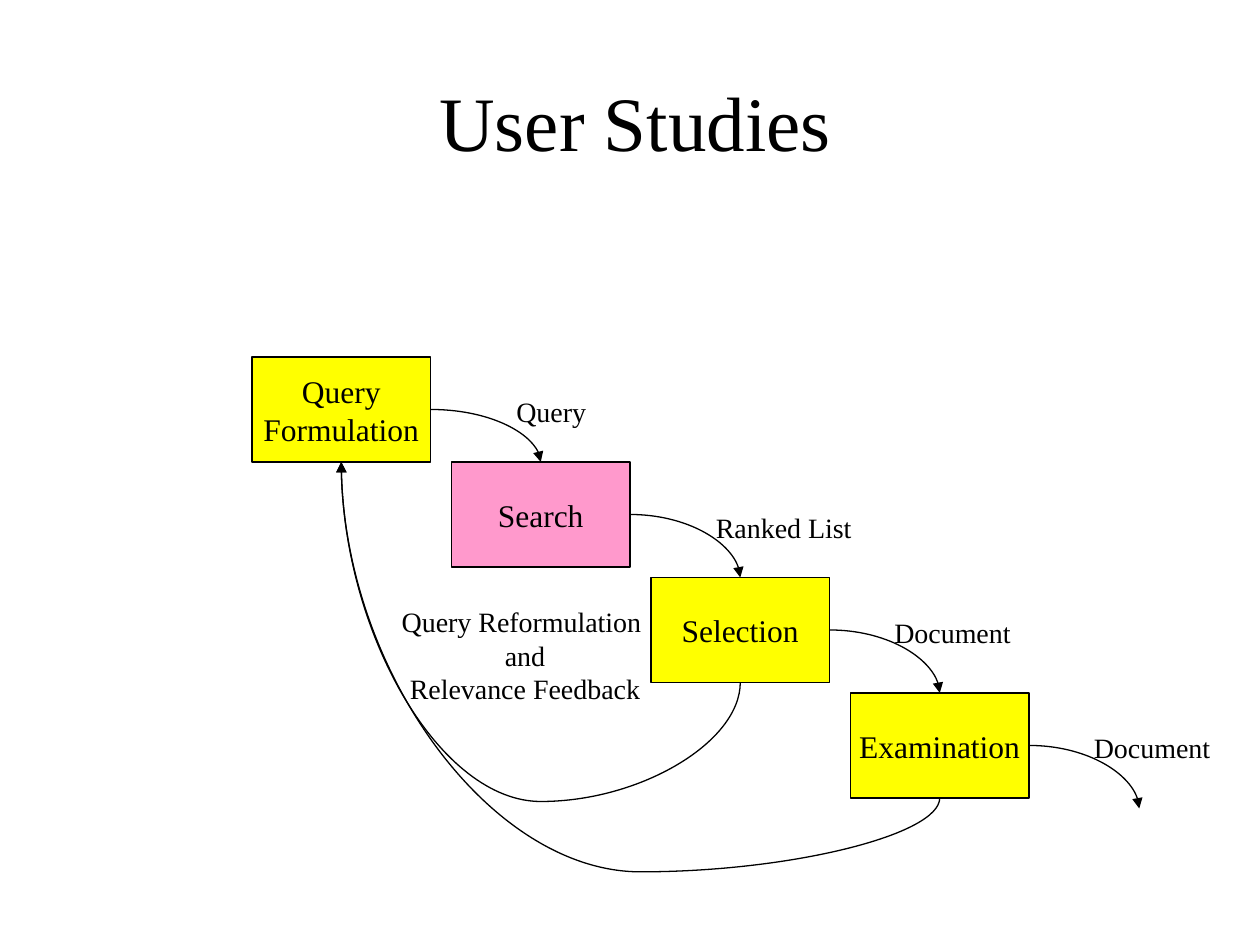
import pptx
import pptx.util
import pptx.dml.color
import pptx.enum.shapes
import pptx.enum.text
import pptx.oxml.ns
import lxml.etree

Pt = pptx.util.Pt
RGBColor = pptx.dml.color.RGBColor
MSO_ANCHOR = pptx.enum.text.MSO_ANCHOR
PP_ALIGN = pptx.enum.text.PP_ALIGN
qn = pptx.oxml.ns.qn

BLACK = RGBColor(0x00, 0x00, 0x00)
YELLOW = RGBColor(0xFF, 0xFF, 0x00)
PINK = RGBColor(0xFF, 0x99, 0xCC)

TOP, BOTTOM, RIGHT = 0, 2, 3  # connection sites of a rectangle
BOX_W, BOX_H = 102, 60


def write(tf, text, size=16, align=PP_ALIGN.LEFT, anchor=MSO_ANCHOR.TOP, wrap=False):
    """Fill a text frame, one paragraph for each line of text."""
    tf.word_wrap = wrap
    tf.vertical_anchor = anchor
    for i, line in enumerate(text.split("\n")):
        p = tf.paragraphs[0] if i == 0 else tf.add_paragraph()
        p.alignment = align
        r = p.add_run()
        r.text = line
        r.font.name = "Times New Roman"
        r.font.size = Pt(size)
        r.font.color.rgb = BLACK


class FlowSlide:
    """Style and current slide of the flow diagram."""

    line_width = 0.75

    def __init__(self, prs):
        self.s = prs.slides.add_slide(prs.slide_layouts[5])

    def title(self, text, x, y, w, h):
        sp = self.s.shapes.title
        sp.left, sp.top, sp.width, sp.height = Pt(x), Pt(y), Pt(w), Pt(h)
        write(sp.text_frame, text, size=44, align=PP_ALIGN.CENTER,
              anchor=MSO_ANCHOR.MIDDLE, wrap=True)

    def box(self, text, x, y, fill):
        sp = self.s.shapes.add_shape(pptx.enum.shapes.MSO_SHAPE.RECTANGLE,
                                     Pt(x), Pt(y), Pt(BOX_W), Pt(BOX_H))
        sp.shadow.inherit = False
        sp.fill.solid()
        sp.fill.fore_color.rgb = fill
        sp.line.color.rgb = BLACK
        sp.line.width = Pt(self.line_width)
        write(sp.text_frame, text, size=18, align=PP_ALIGN.CENTER,
              anchor=MSO_ANCHOR.MIDDLE)
        return sp

    def label(self, text, x, y, w, h=27, align=PP_ALIGN.LEFT):
        sp = self.s.shapes.add_textbox(Pt(x), Pt(y), Pt(w), Pt(h))
        write(sp.text_frame, text, align=align)
        sp.text_frame.auto_size = pptx.enum.text.MSO_AUTO_SIZE.SHAPE_TO_FIT_TEXT

    def curve(self, x1, y1, x2, y2):
        c = self.s.shapes.add_connector(pptx.enum.shapes.MSO_CONNECTOR.CURVE,
                                        x1, y1, x2, y2)
        c.line.color.rgb = BLACK
        c.line.width = Pt(self.line_width)
        ln = c._element.spPr.find(qn("a:ln"))
        lxml.etree.SubElement(ln, qn("a:tailEnd")).set("type", "triangle")
        lxml.etree.SubElement(c._element.spPr, qn("a:effectLst"))
        return c

    def step(self, start, x2, y2, end=None):
        """Quarter curve from the right side of a box down to a point."""
        c = self.curve(start.left + start.width, start.top + start.height // 2,
                       x2, y2)
        c._element.spPr.find(qn("a:prstGeom")).set("prst", "curvedConnector2")
        c.begin_connect(start, RIGHT)
        if end is not None:
            c.end_connect(end, TOP)

    def feedback(self, start, end, adjust):
        """Curve that dips below the start box and rises to the end box."""
        x1, x2 = [b.left + b.width // 2 for b in (start, end)]
        y1, y2 = [b.top + b.height for b in (start, end)]
        c = self.curve(x1, y1, x2, y2)
        c.begin_connect(start, BOTTOM)
        c.end_connect(end, BOTTOM)
        # A quarter turn swaps width and height around the same centre
        w, h = y1 - y2, x1 - x2
        c.left, c.top = (x1 + x2 - w) // 2, (y1 + y2 - h) // 2
        c.width, c.height = w, h
        xfrm = c._element.spPr.find(qn("a:xfrm"))
        for name, value in (("rot", "16200000"), ("flipH", "0"), ("flipV", "1")):
            xfrm.set(name, value)
        geom = c._element.spPr.find(qn("a:prstGeom"))
        guides = geom.find(qn("a:avLst"))
        if guides is None:
            guides = lxml.etree.SubElement(geom, qn("a:avLst"))
        gd = lxml.etree.SubElement(guides, qn("a:gd"))
        gd.set("name", "adj1")
        gd.set("fmla", f"val {round(adjust * 100000)}")


def main():
    prs = pptx.Presentation()
    prs.slide_width, prs.slide_height = Pt(720), Pt(540)
    flow = FlowSlide(prs)
    flow.title("User Studies", 42, 24, 642, 90)

    # Stages of the search process, stepping down to the right
    stages = [("Query\nFormulation", 204, YELLOW), ("Search", 264, PINK),
              ("Selection", 330, YELLOW), ("Examination", 396, YELLOW)]
    boxes = [flow.box(text, 144 + 114 * i, y, fill)
             for i, (text, y, fill) in enumerate(stages)]

    # Steps between stages, and the final one out of the process
    for start, end in zip(boxes, boxes[1:]):
        flow.step(start, end.left + end.width // 2, end.top, end)
    flow.step(boxes[-1], Pt(651), Pt(462))

    # What each step hands over
    for text, x, y, w in [("Query", 288, 222, 55), ("Ranked List", 402, 288, 92),
                          ("Document", 504, 348, 81), ("Document", 618, 414, 81)]:
        flow.label(text, x, y, w)

    # Feedback to query formulation
    flow.feedback(boxes[2], boxes[0], -0.54)
    flow.feedback(boxes[3], boxes[0], -0.22)
    flow.label("Query Reformulation \nand\nRelevance Feedback", 222, 342, 156, 65,
               align=PP_ALIGN.CENTER)

    prs.save("out.pptx")


if __name__ == "__main__":
    main()
